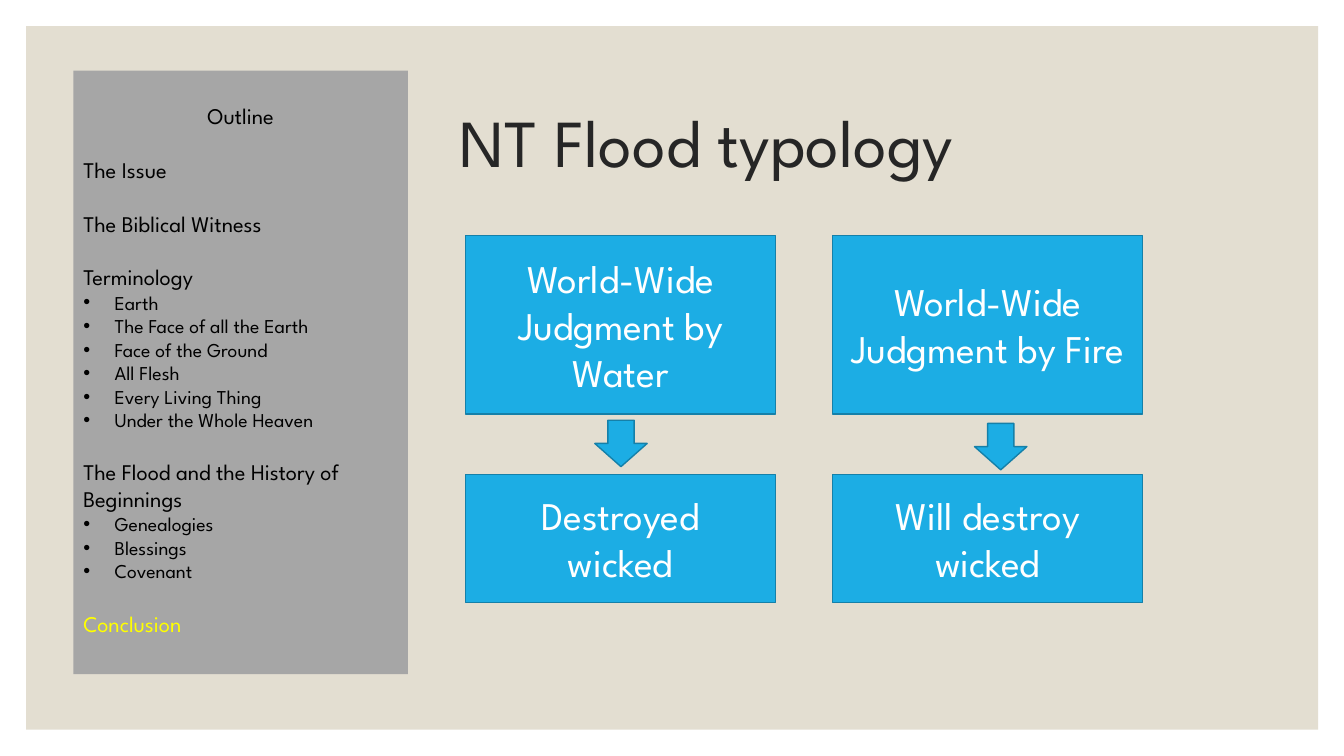
from lxml.etree import SubElement
from pptx import Presentation
from pptx.dml.color import RGBColor
from pptx.enum.shapes import MSO_SHAPE
from pptx.enum.text import MSO_ANCHOR, MSO_AUTO_SIZE, PP_ALIGN
from pptx.oxml.ns import qn
from pptx.util import Cm, Pt

FONT = "League Spartan"
SAND = RGBColor(0xE3, 0xDE, 0xD1)
GRAY = RGBColor(0xA6, 0xA6, 0xA6)
BLUE = RGBColor(0x1C, 0xAD, 0xE4)
EDGE = RGBColor(0x15, 0x80, 0xA9)
INK = RGBColor(0x26, 0x26, 0x26)
BLACK = RGBColor(0, 0, 0)
WHITE = RGBColor(0xFF, 0xFF, 0xFF)
YELLOW = RGBColor(0xFF, 0xFF, 0)

OUTLINE = [
    ("The Issue", []),
    ("The Biblical Witness", []),
    ("Terminology", ["Earth", "The Face of all the Earth", "Face of the Ground",
                     "All Flesh", "Every Living Thing",
                     "Under the Whole Heaven"]),
    ("The Flood and the History of Beginnings",
     ["Genealogies", "Blessings", "Covenant"]),
    ("Conclusion", []),
]
# Left edge, arrow left, arrow top, cause lines, result lines
COLUMNS = [
    (11.73, 14.99, 10.59, ["World-Wide", "Judgment by Water"],
     ["Destroyed", "wicked"]),
    (20.98, 24.56, 10.67, ["World-Wide Judgment by Fire"],
     ["Will destroy", "wicked"]),
]


def write(frame, text, size=16, color=BLACK, align=PP_ALIGN.LEFT,
          before=0, bullet=False):
    """Fill the empty first paragraph, or add one, and return it."""
    para = frame.paragraphs[0] if not frame.text else frame.add_paragraph()
    para.alignment = align
    para.space_before = Pt(before)
    run = para.add_run()
    run.text = text
    run.font.name = FONT
    run.font.size = Pt(size)
    run.font.color.rgb = color
    if bullet:
        props = para._p.get_or_add_pPr()
        props.set("marL", str(Cm(0.79)))
        props.set("indent", str(-Cm(0.79)))
        SubElement(props, qn("a:buFont"), typeface="Arial")
        SubElement(props, qn("a:buChar"), char="•")
    return para


def add_form(slide, kind, left, top, width, height, fill, edge=None):
    form = slide.shapes.add_shape(kind, Cm(left), Cm(top), Cm(width), Cm(height))
    form.shadow.inherit = False
    form.fill.solid()
    form.fill.fore_color.rgb = fill
    if edge is None:
        form.line.fill.background()
    else:
        form.line.color.rgb = edge
        form.line.width = Pt(1)
    return form


def add_box(slide, left, top, height, lines):
    box = add_form(slide, MSO_SHAPE.RECTANGLE, left, top, 7.82, height, BLUE, EDGE)
    frame = box.text_frame
    frame.word_wrap = True
    frame.vertical_anchor = MSO_ANCHOR.MIDDLE
    for line in lines:
        write(frame, line, size=28, color=WHITE, align=PP_ALIGN.CENTER)


def add_title(slide, text):
    title = slide.shapes.title
    title.left, title.top = Cm(11.33), Cm(1.78)
    title.width, title.height = Cm(20.68), Cm(3.81)
    frame = title.text_frame
    frame.word_wrap = True
    frame.auto_size = MSO_AUTO_SIZE.NONE
    frame.vertical_anchor = MSO_ANCHOR.MIDDLE
    write(frame, text, size=48, color=INK).line_spacing = 0.9


def add_panel(slide):
    panel = add_form(slide, MSO_SHAPE.RECTANGLE, 1.85, 1.78, 8.43, 15.21, GRAY)
    frame = panel.text_frame
    frame.word_wrap = True
    frame.vertical_anchor = MSO_ANCHOR.TOP
    frame.margin_top = Cm(0.8)
    write(frame, "Outline", align=PP_ALIGN.CENTER)
    for head, items in OUTLINE:
        color = YELLOW if head == "Conclusion" else BLACK
        write(frame, head, color=color, before=19.2)
        for item in items:
            write(frame, item, size=14, bullet=True)


def main():
    deck = Presentation()
    deck.slide_width, deck.slide_height = Cm(33.87), Cm(19.05)
    slide = deck.slides.add_slide(deck.slide_layouts[5])
    add_title(slide, "NT Flood typology")
    back = add_form(slide, MSO_SHAPE.RECTANGLE, 0.66, 0.66, 32.56, 17.73, SAND)
    slide.shapes.title.element.addprevious(back.element)
    for left, tip, drop, cause, result in COLUMNS:
        add_box(slide, left, 5.93, 4.5, cause)
        add_box(slide, left, 11.96, 3.23, result)
        add_form(slide, MSO_SHAPE.DOWN_ARROW, tip, drop, 1.32, 1.17, BLUE, EDGE)
    add_panel(slide)
    deck.save("out.pptx")


if __name__ == "__main__":
    main()
